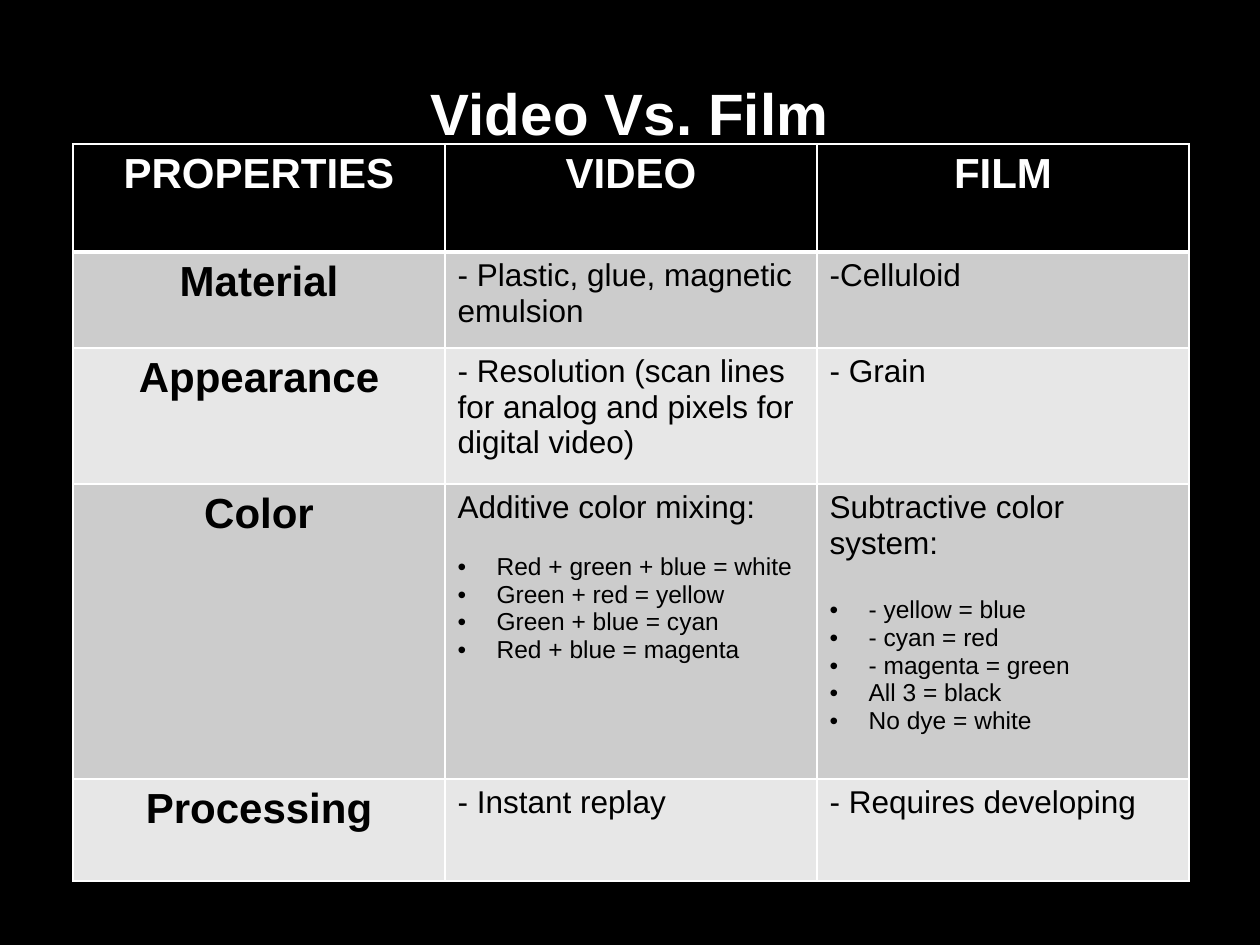
from dataclasses import dataclass

from lxml.etree import SubElement
from pptx import Presentation
from pptx.dml.color import RGBColor
from pptx.enum.text import MSO_ANCHOR, PP_ALIGN
from pptx.oxml import parse_xml
from pptx.oxml.ns import nsdecls, qn
from pptx.util import Emu, Pt

# Content: each cell is a heading, or a heading with its bullets
TITLE = "Video Vs. Film"
HEADER = ["PROPERTIES", "VIDEO", "FILM"]
ROWS = [
    ("Material", "- Plastic, glue, magnetic emulsion", "-Celluloid"),
    ("Appearance",
     "- Resolution (scan lines for analog and pixels for digital video)",
     "- Grain"),
    ("Color",
     ("Additive color mixing:",
      ["Red + green + blue = white", "Green + red = yellow",
       "Green + blue = cyan", "Red + blue = magenta"], 16),
     ("Subtractive color system:",
      ["- yellow = blue", "- cyan = red", "- magenta = green",
       "All 3 = black", "No dye = white"], 20.5)),
    ("Processing", "- Instant replay", "- Requires developing"),
]


@dataclass(frozen=True)
class Theme:
    font: str = "Arial"
    dark: str = "000000"
    light: str = "FFFFFF"
    bands: tuple = ("CCCCCC", "E7E7E7")
    title: float = 33.3
    label: float = 24
    body: float = 18
    bullet: float = 14
    thin: float = 1
    thick: float = 3


THEME = Theme()

# Layout in px
SLIDE_WIDTH, SLIDE_HEIGHT = 1260, 945
TITLE_BOX = (0, 64, SLIDE_WIDTH, 81)
TITLE_INSET = 13
TABLE_LEFT, TABLE_TOP = 73, 144
COLUMN_WIDTH = 372
ROW_HEIGHTS = [108, 96, 136, 295, 102]
BULLET_INDENT = 39


def px(value):
    return Emu(round(value * 914400 / 126))


def write(paragraph, text, size, color, bold=False, **formats):
    run = paragraph.add_run()
    run.text = text
    run.font.color.rgb = RGBColor.from_string(color)
    for name, value in dict(name=THEME.font, size=Pt(size), bold=bold).items():
        setattr(run.font, name, value)
    for name, value in formats.items():
        setattr(paragraph, name, value)


def add_bullet(paragraph):
    properties = paragraph._p.get_or_add_pPr()
    properties.set("marL", str(px(BULLET_INDENT)))
    properties.set("indent", str(-px(BULLET_INDENT)))
    SubElement(properties, qn("a:buFont")).set("typeface", THEME.font)
    SubElement(properties, qn("a:buChar")).set("char", "•")


def set_borders(cell, widths):
    properties = cell._tc.get_or_add_tcPr()
    for position, (side, width) in enumerate(widths.items()):
        properties.insert(position, parse_xml(
            f'<a:ln{side} {nsdecls("a")} w="{Pt(width)}"><a:solidFill>'
            f'<a:srgbClr val="{THEME.light}"/></a:solidFill></a:ln{side}>'))


def fill_cell(cell, content, row, column):
    is_header = row == 0
    fill = THEME.dark if is_header else THEME.bands[(row - 1) % 2]
    cell.fill.solid()
    cell.fill.fore_color.rgb = RGBColor.from_string(fill)
    set_borders(cell, {
        "L": THEME.thin, "R": THEME.thin,
        "T": THEME.thick if row == 1 else THEME.thin,
        "B": THEME.thick if is_header else THEME.thin})

    frame = cell.text_frame
    first = frame.paragraphs[0]
    color = THEME.light if is_header else THEME.dark
    if is_header or column == 0:
        write(first, content, THEME.label, color, bold=True,
              alignment=PP_ALIGN.CENTER)
        return
    heading, bullets, gap = (
        (content, [], 0) if isinstance(content, str) else content)
    write(first, heading, THEME.body, color, space_after=Pt(gap))
    for text in bullets:
        paragraph = frame.add_paragraph()
        write(paragraph, text, THEME.bullet, color)
        add_bullet(paragraph)


def add_title(slide):
    frame = slide.shapes.add_textbox(*map(px, TITLE_BOX)).text_frame
    formats = dict(word_wrap=True, vertical_anchor=MSO_ANCHOR.TOP,
                   margin_top=px(TITLE_INSET), margin_bottom=0)
    for name, value in formats.items():
        setattr(frame, name, value)
    write(frame.paragraphs[0], TITLE, THEME.title, THEME.light, bold=True,
          alignment=PP_ALIGN.CENTER)


def add_comparison(slide):
    grid = [HEADER, *ROWS]
    table = slide.shapes.add_table(
        len(grid), len(HEADER), px(TABLE_LEFT), px(TABLE_TOP),
        px(COLUMN_WIDTH * len(HEADER)), px(sum(ROW_HEIGHTS))).table
    table.horz_banding = False
    for column in table.columns:
        column.width = px(COLUMN_WIDTH)
    for row, height in zip(table.rows, ROW_HEIGHTS):
        row.height = px(height)
    for row, contents in enumerate(grid):
        for column, content in enumerate(contents):
            fill_cell(table.cell(row, column), content, row, column)


def main():
    presentation = Presentation()
    presentation.slide_width = px(SLIDE_WIDTH)
    presentation.slide_height = px(SLIDE_HEIGHT)
    slide = presentation.slides.add_slide(presentation.slide_layouts[6])
    background = slide.background.fill
    background.solid()
    background.fore_color.rgb = RGBColor.from_string(THEME.dark)
    add_title(slide)
    add_comparison(slide)
    presentation.save("out.pptx")


if __name__ == "__main__":
    main()
